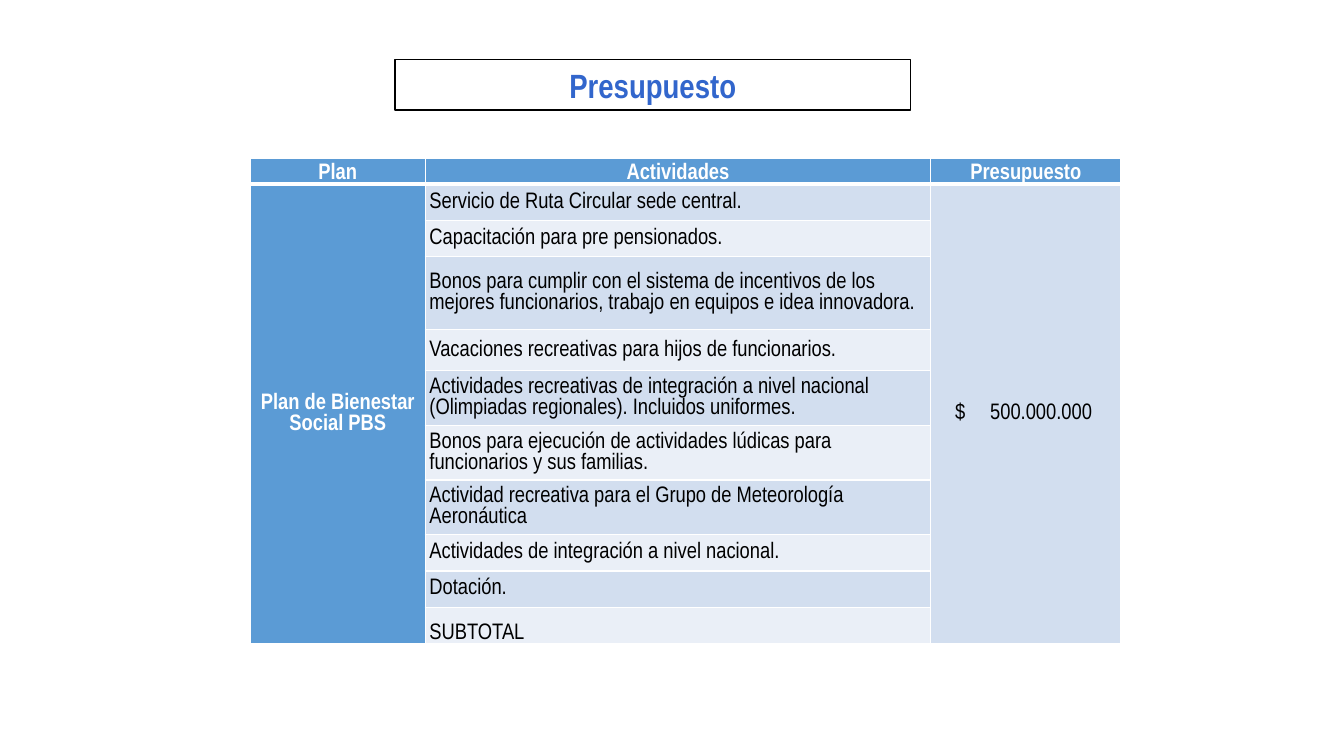
from dataclasses import dataclass
from typing import Any

from lxml.etree import SubElement
from pptx import Presentation
from pptx.dml.color import RGBColor
from pptx.enum.shapes import MSO_SHAPE
from pptx.enum.text import MSO_ANCHOR, PP_ALIGN
from pptx.oxml.ns import qn
from pptx.util import Pt

ACTIVITIES = [
    ("Servicio de Ruta Circular sede central.", 26),
    ("Capacitación para pre pensionados.", 26),
    ("Bonos para cumplir con el sistema de incentivos de los mejores funcionarios, "
     "trabajo en equipos e idea innovadora.", 52),
    ("Vacaciones recreativas para hijos de funcionarios.", 29.5),
    ("Actividades recreativas de integración a nivel nacional "
     "(Olimpiadas regionales). Incluidos uniformes.", 39),
    ("Bonos para ejecución de actividades lúdicas para funcionarios y sus familias.", 39),
    ("Actividad recreativa para el Grupo de Meteorología Aeronáutica", 39),
    ("Actividades de integración a nivel nacional.", 26),
    ("Dotación.", 26),
    ("SUBTOTAL", 26),
]


def color(value):
    return RGBColor.from_string(value)


def write(tf, text, font="Arial Narrow", size=16, fg="000000", bold=False,
          align=PP_ALIGN.LEFT, tab=None):
    p = tf.paragraphs[0]
    p.alignment = align
    if tab:
        tabs = SubElement(p._p.get_or_add_pPr(), qn("a:tabLst"))
        SubElement(tabs, qn("a:tab"), pos=str(Pt(tab)), algn="l")
    r = p.add_run()
    r.text = text
    r.font.name = font
    r.font.size = Pt(size)
    r.font.bold = bold
    r.font.color.rgb = color(fg)


@dataclass
class Deck:
    s: Any
    accent: str = "5B9BD5"
    bands: tuple = ("D2DEEF", "EAEFF7")
    white: str = "FFFFFF"

    def title(self, text, x, y, w, h):
        sp = self.s.shapes.add_shape(MSO_SHAPE.RECTANGLE, Pt(x), Pt(y), Pt(w), Pt(h))
        sp.shadow.inherit = False
        sp.fill.solid()
        sp.fill.fore_color.rgb = color(self.white)
        sp.line.color.rgb = color("000000")
        sp.line.width = Pt(1)
        sp.text_frame.word_wrap = True
        write(sp.text_frame, text, size=24, fg="3266CC", bold=True, align=PP_ALIGN.CENTER)

    def table(self, x, y, widths, heights):
        table = self.s.shapes.add_table(len(heights), len(widths), Pt(x), Pt(y),
                                        Pt(sum(widths)), Pt(sum(heights))).table
        for column, width in zip(table.columns, widths):
            column.width = Pt(width)
        for row, height in zip(table.rows, heights):
            row.height = Pt(height)
        for i, row in enumerate(table.rows):
            for j, cell in enumerate(row.cells):
                self.cell(cell, i, j)
        return table

    def cell(self, cell, i, j):
        cell.margin_left = cell.margin_right = Pt(3)
        cell.margin_top = cell.margin_bottom = 0
        cell.vertical_anchor = MSO_ANCHOR.BOTTOM if i == 0 else MSO_ANCHOR.MIDDLE
        widths = {"L": 1, "R": 1, "T": 3 if i == 1 else 1, "B": 3 if i == 0 else 1}
        for side, width in widths.items():
            ln = SubElement(cell._tc.get_or_add_tcPr(), qn("a:ln" + side), w=str(Pt(width)))
            SubElement(SubElement(ln, qn("a:solidFill")), qn("a:srgbClr"), val=self.white)
        cell.fill.solid()
        fill = self.accent if i == 0 or j == 0 else self.bands[(i - 1) % 2]
        cell.fill.fore_color.rgb = color(fill)


def main():
    prs = Presentation()
    prs.slide_width, prs.slide_height = Pt(960), Pt(540)
    deck = Deck(prs.slides.add_slide(prs.slide_layouts[6]))

    heights = [18.5] + [height for _, height in ACTIVITIES]
    table = deck.table(178.8, 113, [125, 361, 136], heights)
    heading = dict(fg=deck.white, bold=True, align=PP_ALIGN.CENTER)
    for j, name in enumerate(["Plan", "Actividades", "Presupuesto"]):
        write(table.cell(0, j).text_frame, name, **heading)
    for i, (activity, _) in enumerate(ACTIVITIES, 1):
        write(table.cell(i, 1).text_frame, activity)
    last = len(ACTIVITIES)
    table.cell(last, 1).vertical_anchor = MSO_ANCHOR.BOTTOM

    for j in (0, 2):
        table.cell(1, j).merge(table.cell(last, j))
    write(table.cell(1, 0).text_frame, "Plan de Bienestar Social PBS", **heading)
    amount = table.cell(1, 2)
    amount.margin_left = Pt(17.5)
    write(amount.text_frame, "$\t500.000.000", tab=25)

    deck.title("Presupuesto", 282.3, 42.7, 368, 36)
    prs.save("out.pptx")


if __name__ == "__main__":
    main()
